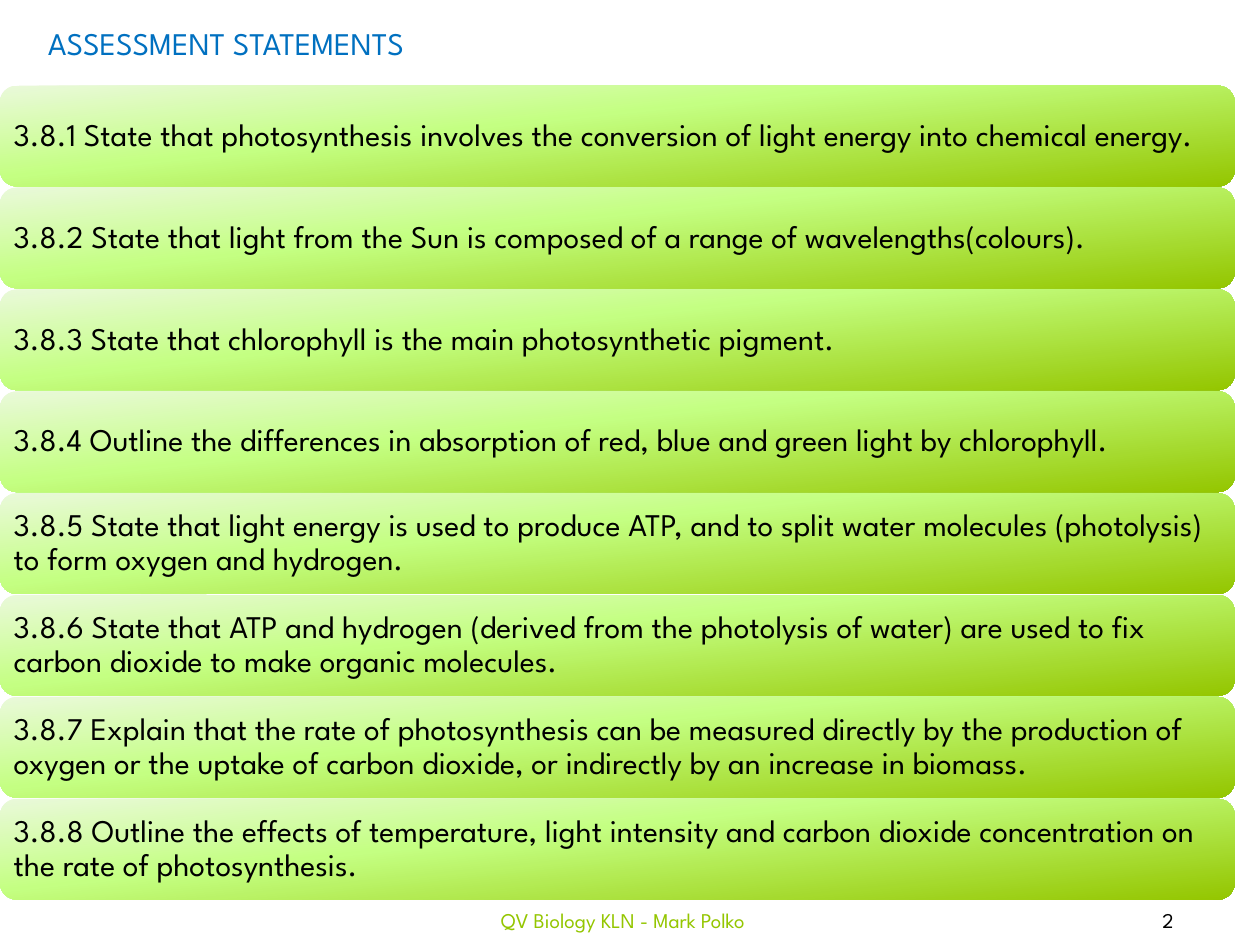
import copy

import pptx
import pptx.dml.color
import pptx.enum.shapes
import pptx.enum.text
import pptx.oxml.ns
import pptx.util

Inches = pptx.util.Inches
Pt = pptx.util.Pt
RGBColor = pptx.dml.color.RGBColor
ALIGN = pptx.enum.text.PP_ALIGN
ANCHOR = pptx.enum.text.MSO_ANCHOR

HEADING = "ASSESSMENT STATEMENTS"
STATEMENTS = [
    "3.8.1 State that photosynthesis involves the conversion of light energy into chemical energy.",
    "3.8.2 State that light from the Sun is composed of a range of wavelengths(colours).",
    "3.8.3 State that chlorophyll is the main photosynthetic pigment.",
    "3.8.4 Outline the differences in absorption of red, blue and green light by chlorophyll.",
    "3.8.5 State that light energy is used to produce ATP, and to split water molecules "
    "(photolysis) to form oxygen and hydrogen.",
    "3.8.6 State that ATP and hydrogen (derived from the photolysis of water) are used to fix "
    "carbon dioxide to make organic molecules.",
    "3.8.7 Explain that the rate of photosynthesis can be measured directly by the production of "
    "oxygen or the uptake of carbon dioxide, or indirectly by an increase in biomass.",
    "3.8.8 Outline the effects of temperature, light intensity and carbon dioxide concentration "
    "on the rate of photosynthesis.",
]

FONT = "League Spartan"
BLACK = RGBColor(0x00, 0x00, 0x00)
BLUE = RGBColor(0x00, 0x70, 0xC0)
GREEN = RGBColor(0x94, 0xC6, 0x00)
PALE_GREEN = RGBColor(0xEA, 0xF9, 0xDA)
LIGHT_GREEN = RGBColor(0xC4, 0xFF, 0x82)
BAR_STOPS = [(0, PALE_GREEN), (0.4, LIGHT_GREEN), (1, GREEN)]

FOOTERS = [
    ("2", (8.54, 7.1, 1.46, 0.4), BLACK),
    ("QV Biology KLN - Mark Polko", (3.03, 7.1, 3.83, 0.4), GREEN),
]
BAR_TOP, BAR_BOTTOM = 0.68, 7.14
BAR_WIDTH, BAR_HEIGHT = 9.8, 0.8
BAR_PITCH = (BAR_BOTTOM - BAR_HEIGHT - BAR_TOP) / (len(STATEMENTS) - 1)

INSET = Inches(0.07)
HEADING_FRAME = {"word_wrap": False, "vertical_anchor": ANCHOR.TOP}
FOOTER_FRAME = {"word_wrap": True, "vertical_anchor": ANCHOR.MIDDLE}
BAR_FRAME = {
    "word_wrap": True, "vertical_anchor": ANCHOR.MIDDLE,
    "margin_left": INSET, "margin_right": INSET,
    "margin_top": INSET, "margin_bottom": INSET,
}
LEFT = {"alignment": ALIGN.LEFT}
CENTRED = {"alignment": ALIGN.CENTER}
STATEMENT_LINES = {"alignment": ALIGN.LEFT, "line_spacing": 0.9}


def apply(target, values):
    for name, value in values.items():
        setattr(target, name, value)


def write(holder, wording, size, colour, frame_format, paragraph_format):
    frame = holder.text_frame
    frame.text = wording
    apply(frame, frame_format)
    paragraph = frame.paragraphs[0]
    apply(paragraph, paragraph_format)
    font = paragraph.runs[0].font
    apply(font, {"name": FONT, "size": Pt(size), "bold": False})
    font.color.rgb = colour


def fill_gradient(bar):
    bar.fill.gradient()
    stop_list = bar.element.spPr.find(".//" + pptx.oxml.ns.qn("a:gsLst"))
    stop_list.append(copy.deepcopy(stop_list[0]))
    for stop, (position, colour) in zip(bar.fill.gradient_stops, BAR_STOPS):
        stop.position = position
        stop.color.rgb = colour
    bar.fill.gradient_angle = 360 - 84


def add_bar(slide, index, statement):
    bar = slide.shapes.add_shape(
        pptx.enum.shapes.MSO_SHAPE.ROUNDED_RECTANGLE,
        Inches(0), Inches(BAR_TOP + index * BAR_PITCH),
        Inches(BAR_WIDTH), Inches(BAR_HEIGHT))
    bar.shadow.inherit = False
    bar.line.fill.background()
    fill_gradient(bar)
    write(bar, statement, 18, BLACK, BAR_FRAME, STATEMENT_LINES)


def main():
    deck = pptx.Presentation()
    apply(deck, {"slide_width": Inches(10), "slide_height": Inches(7.5)})
    slide = deck.slides.add_slide(deck.slide_layouts[5])

    heading = slide.shapes.title
    apply(heading, {"left": Inches(0.28), "top": Inches(0.14),
                    "width": Inches(3.21), "height": Inches(0.71)})
    write(heading, HEADING, 18, BLUE, HEADING_FRAME, LEFT)

    for wording, place, colour in FOOTERS:
        footer = slide.shapes.add_textbox(*map(Inches, place))
        write(footer, wording, 12, colour, FOOTER_FRAME, CENTRED)

    for index, statement in enumerate(STATEMENTS):
        add_bar(slide, index, statement)

    deck.save("out.pptx")


if __name__ == "__main__":
    main()
